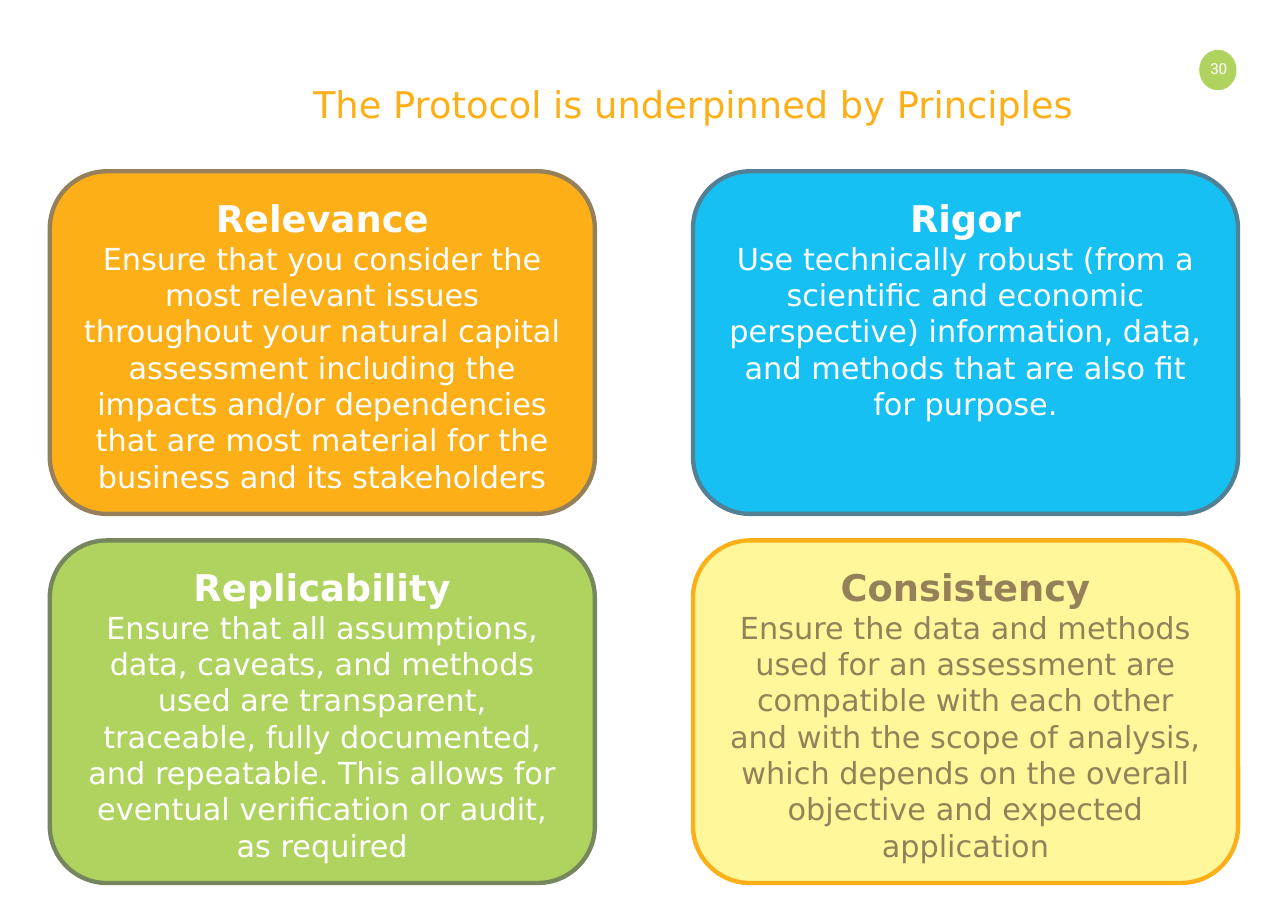
"""Build the slide on the four principles that underpin the Protocol."""
import pptx
import pptx.util
import pptx.dml.color
import pptx.enum.shapes
import pptx.enum.text

Inches = pptx.util.Inches
RGBColor = pptx.dml.color.RGBColor
SHAPE = pptx.enum.shapes.MSO_SHAPE
ALIGN = pptx.enum.text.PP_ALIGN
ANCHOR = pptx.enum.text.MSO_ANCHOR
AUTO_SIZE = pptx.enum.text.MSO_AUTO_SIZE

WHITE = RGBColor(0xFF, 0xFF, 0xFF)
ORANGE = RGBColor(0xFD, 0xAF, 0x18)
BLUE = RGBColor(0x16, 0xC0, 0xF3)
GREEN = RGBColor(0xB0, 0xD3, 0x60)
YELLOW = RGBColor(0xFF, 0xF7, 0x99)
BROWN = RGBColor(0x95, 0x80, 0x5A)
SLATE = RGBColor(0x52, 0x81, 0x95)
OLIVE = RGBColor(0x76, 0x86, 0x5D)

PRINCIPLES = [
    ("Relevance",
     "Ensure that you consider the most relevant issues throughout your natural "
     "capital assessment including the impacts and/or dependencies that are most "
     "material for the business and its stakeholders",
     ORANGE, BROWN, WHITE),
    ("Rigor",
     "Use technically robust (from a scientific and economic perspective) "
     "information, data, and methods that are also fit for purpose.",
     BLUE, SLATE, WHITE),
    ("Replicability",
     "Ensure that all assumptions, data, caveats, and methods used are "
     "transparent, traceable, fully documented, and repeatable. This allows for "
     "eventual verification or audit, as required",
     GREEN, OLIVE, WHITE),
    ("Consistency",
     "Ensure the data and methods used for an assessment are compatible with each "
     "other and with the scope of analysis, which depends on the overall "
     "objective and expected application",
     YELLOW, ORANGE, BROWN),
]


def add_span(para, text, size, color, bold=False, font="DejaVu Sans"):
    span = para.add_run()
    span.text = text
    span.font.name = font
    span.font.size = pptx.util.Pt(size)
    span.font.bold = bold
    span.font.color.rgb = color


def set_margins(frame):
    frame.margin_left = frame.margin_right = Inches(0.08)
    frame.margin_top = frame.margin_bottom = Inches(0.04)


deck = pptx.Presentation()
deck.slide_width, deck.slide_height = Inches(8.27), Inches(5.83)
page = deck.slides.add_slide(deck.slide_layouts[5])

badge = page.shapes.add_shape(
    SHAPE.OVAL, Inches(7.7), Inches(0.32), Inches(0.24), Inches(0.26))
badge.shadow.inherit = False
badge.fill.solid()
badge.fill.fore_color.rgb = GREEN
badge.line.fill.background()

number = page.shapes.add_textbox(
    Inches(7.68), Inches(0.34), Inches(0.29), Inches(0.2))
number.text_frame.word_wrap = False
set_margins(number.text_frame)
para = number.text_frame.paragraphs[0]
para.alignment = ALIGN.CENTER
add_span(para, "30", 7, WHITE, font="Roboto")

title = page.shapes.title
title.left, title.top = Inches(1.93), Inches(0.39)
title.width, title.height = Inches(5.2), Inches(0.55)
title.text_frame.auto_size = AUTO_SIZE.NONE
title.text_frame.vertical_anchor = ANCHOR.MIDDLE
set_margins(title.text_frame)
para = title.text_frame.paragraphs[0]
para.alignment = ALIGN.LEFT
add_span(para, "The Protocol is underpinned by Principles", 17, ORANGE)

for index, (name, advice, fill, border, ink) in enumerate(PRINCIPLES):
    row, column = divmod(index, 2)
    card = page.shapes.add_shape(
        SHAPE.ROUNDED_RECTANGLE,
        Inches(0.32 + 4.13 * column), Inches(1.1 + 2.37 * row),
        Inches(3.5), Inches(2.2))
    card.shadow.inherit = False
    card.fill.solid()
    card.fill.fore_color.rgb = fill
    card.line.color.rgb = border
    card.line.width = pptx.util.Pt(2)
    frame = card.text_frame
    frame.word_wrap = True
    frame.vertical_anchor = ANCHOR.TOP
    heading = frame.paragraphs[0]
    heading.alignment = ALIGN.CENTER
    add_span(heading, name, 17, ink, bold=True)
    body = frame.add_paragraph()
    body.alignment = ALIGN.CENTER
    add_span(body, advice, 14, ink)

deck.save("out.pptx")
